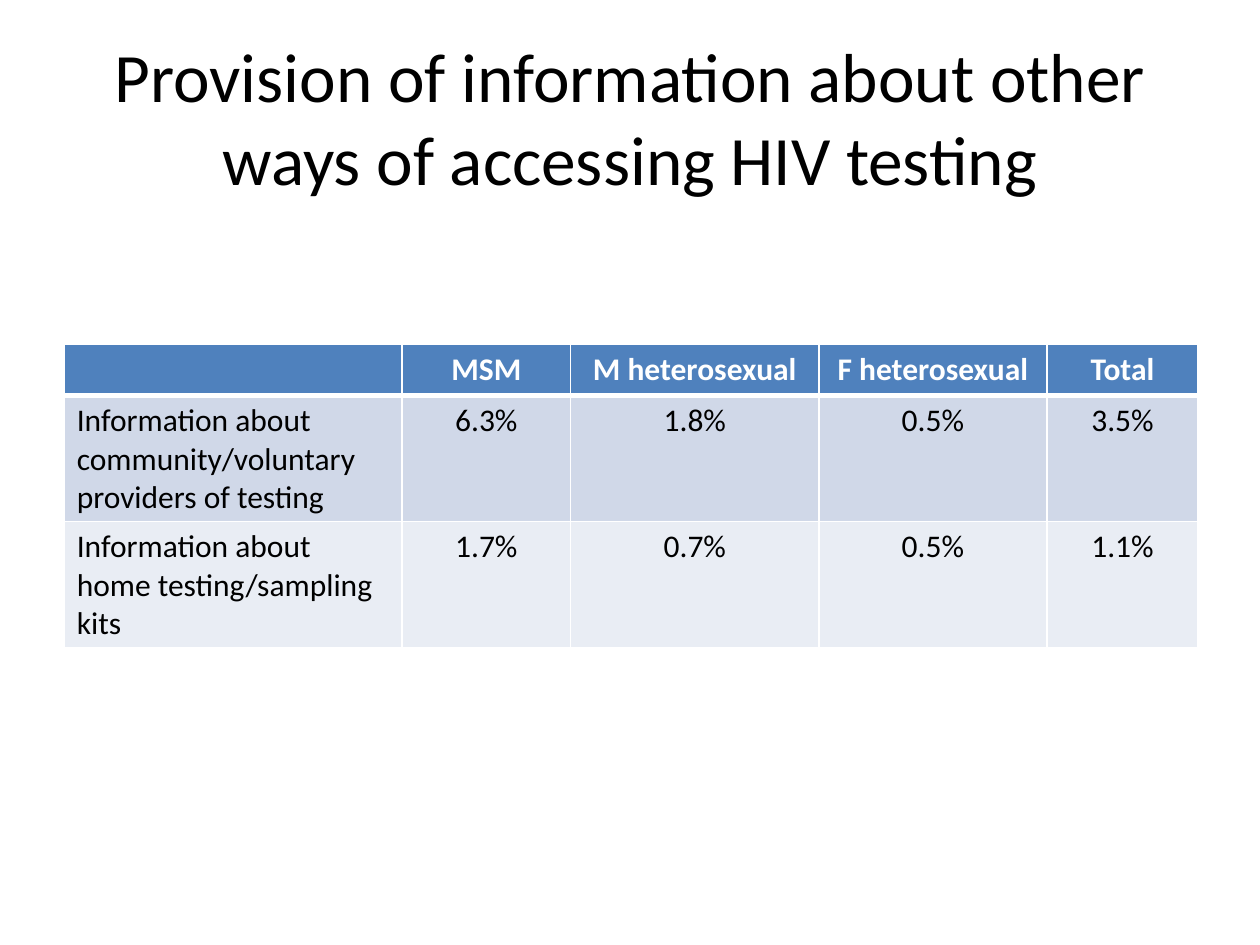
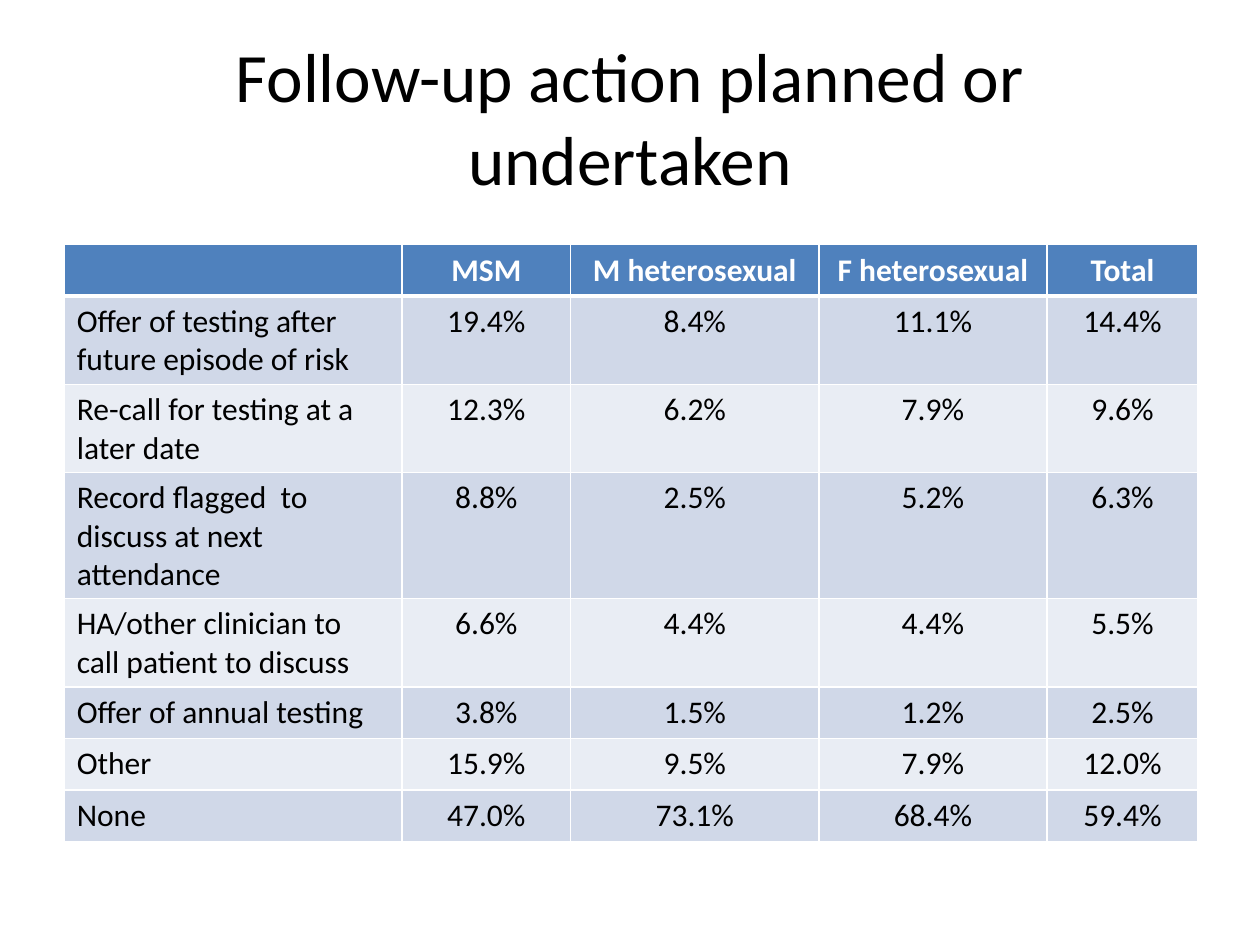
from lxml.etree import SubElement
from pptx import Presentation
from pptx.dml.color import RGBColor
from pptx.enum.text import MSO_ANCHOR as Anchor, PP_ALIGN as Align
from pptx.oxml.ns import qn
from pptx.util import Inches, Pt

COLORS = {
    "title": "000000",
    "body": "000000",
    "header_text": "FFFFFF",
    "header": "4F81BD",
    "odd_row": "D0D8E8",
    "even_row": "E9EDF4",
    "border": "FFFFFF",
}
FONT = "Calibri"
GROUPS = ["", "MSM", "M heterosexual", "F heterosexual", "Total"]
COLUMN_WIDTHS = [2.68, 1.34, 1.97, 1.81, 1.2]
ROW_HEIGHT = 0.41

SLIDES = [
    ("Provision of information about other ways of accessing HIV testing", 2.73, [
        ["Information about community/voluntary providers of testing",
         "6.3%", "1.8%", "0.5%", "3.5%"],
        ["Information about home testing/sampling kits",
         "1.7%", "0.7%", "0.5%", "1.1%"],
    ]),
    ("Follow-up action planned or undertaken", 1.94, [
        ["Offer of testing after future episode of risk",
         "19.4%", "8.4%", "11.1%", "14.4%"],
        ["Re-call for testing at a later date", "12.3%", "6.2%", "7.9%", "9.6%"],
        ["Record flagged  to discuss at next attendance",
         "8.8%", "2.5%", "5.2%", "6.3%"],
        ["HA/other clinician to call patient to discuss",
         "6.6%", "4.4%", "4.4%", "5.5%"],
        ["Offer of annual testing", "3.8%", "1.5%", "1.2%", "2.5%"],
        ["Other", "15.9%", "9.5%", "7.9%", "12.0%"],
        ["None", "47.0%", "73.1%", "68.4%", "59.4%"],
    ]),
]


def rgb(role):
    return RGBColor.from_string(COLORS[role])


def style_paragraph(paragraph, size, color, align, bold=False):
    paragraph.alignment = align
    paragraph.font.name = FONT
    paragraph.font.size = Pt(size)
    paragraph.font.bold = bold
    paragraph.font.color.rgb = rgb(color)


def add_title(slide, text):
    title = slide.shapes.add_textbox(Inches(0.5), Inches(0.3), Inches(9), Inches(1.25))
    frame = title.text_frame
    frame.word_wrap = True
    frame.vertical_anchor = Anchor.MIDDLE
    frame.text = text
    style_paragraph(frame.paragraphs[0], 39.6, "title", Align.CENTER)


def set_borders(cell, top, bottom):
    properties = cell._tc.get_or_add_tcPr()
    for side, width in (("L", 1), ("R", 1), ("T", top), ("B", bottom)):
        border = SubElement(properties, qn(f"a:ln{side}"), w=str(Pt(width)))
        fill = SubElement(border, qn("a:solidFill"))
        SubElement(fill, qn("a:srgbClr"), val=COLORS["border"])


def fill_cell(cell, text, row, column):
    is_header = row == 0
    set_borders(cell, top=3 if row == 1 else 1, bottom=3 if is_header else 1)
    cell.fill.solid()
    band = "odd_row" if row % 2 else "even_row"
    cell.fill.fore_color.rgb = rgb("header" if is_header else band)
    cell.vertical_anchor = Anchor.BOTTOM if is_header else Anchor.TOP
    cell.text = text
    style_paragraph(cell.text_frame.paragraphs[0], 18,
                    "header_text" if is_header else "body",
                    Align.CENTER if column else Align.LEFT, is_header)


def add_results_table(slide, top, results):
    rows = [GROUPS, *results]
    table = slide.shapes.add_table(
        len(rows), len(GROUPS), Inches(0.51), Inches(top),
        Inches(sum(COLUMN_WIDTHS)), Inches(ROW_HEIGHT * len(rows))).table
    for column, width in zip(table.columns, COLUMN_WIDTHS):
        column.width = Inches(width)
    for r, values in enumerate(rows):
        table.rows[r].height = Inches(ROW_HEIGHT)
        for c, value in enumerate(values):
            fill_cell(table.cell(r, c), value, r, c)


def main():
    deck = Presentation()
    deck.slide_width, deck.slide_height = Inches(10), Inches(7.5)
    for title, table_top, results in SLIDES:
        slide = deck.slides.add_slide(deck.slide_layouts[6])
        add_title(slide, title)
        add_results_table(slide, table_top, results)
    deck.save("out.pptx")


if __name__ == "__main__":
    main()
